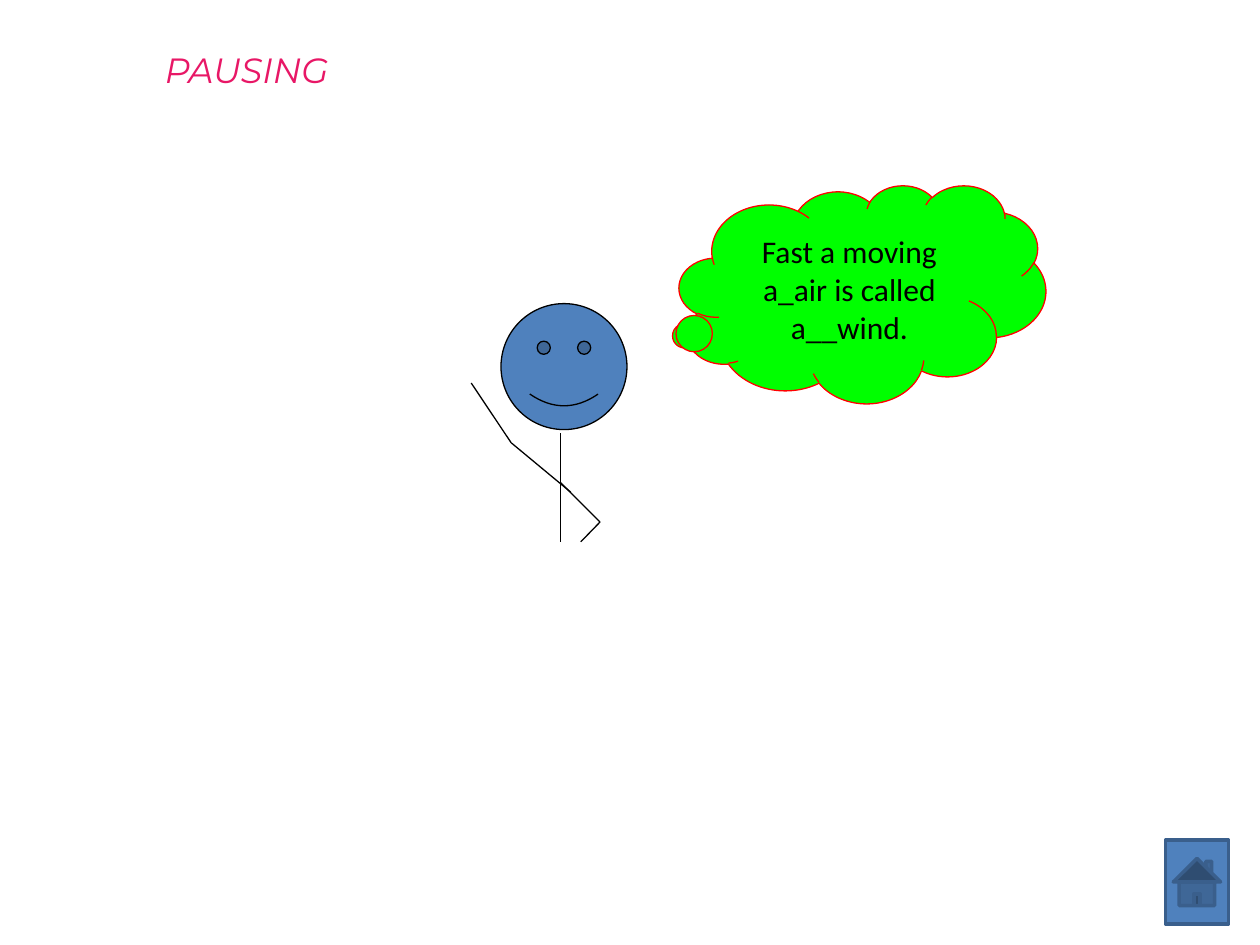
from itertools import pairwise

from lxml import etree
from pptx import Presentation
from pptx.dml.color import RGBColor
from pptx.enum.shapes import MSO_CONNECTOR, MSO_SHAPE
from pptx.enum.text import MSO_ANCHOR, PP_ALIGN
from pptx.oxml.ns import qn
from pptx.util import Pt

LINE = MSO_CONNECTOR.STRAIGHT
FACE = MSO_SHAPE.SMILEY_FACE
CLOUD = MSO_SHAPE.CLOUD_CALLOUT
HOME = MSO_SHAPE.ACTION_BUTTON_HOME
TOP, MID = MSO_ANCHOR.TOP, MSO_ANCHOR.MIDDLE
CENTER = PP_ALIGN.CENTER
MARGIN = {"margin_left": Pt(7.2), "margin_right": Pt(7.2),
          "margin_top": Pt(3.6), "margin_bottom": Pt(3.6)}


def tint(code):
    return RGBColor.from_string(code)


def apply(item, style):
    for name, value in style.items():
        setattr(item, name, value)


class Page:
    """Draw styled elements on one slide, with lengths in points."""

    blue, black, pink = "4F81BD", "000000", "E81766"
    green, red, navy = "00FF00", "FF0000", "3A5F8C"

    def __init__(self, deck):
        self.slide = deck.slides.add_slide(deck.slide_layouts[5])
        self.shapes = self.slide.shapes

    def label(self, shape, text, color, anchor, wrap, **style):
        frame = shape.text_frame
        frame.text = text
        apply(frame, {**MARGIN, "vertical_anchor": anchor, "word_wrap": wrap})
        para = frame.paragraphs[0]
        para.alignment = CENTER
        font = para.runs[0].font
        apply(font, style)
        font.color.rgb = tint(color)

    def title(self, text, box):
        head = self.shapes.title
        apply(head, dict(zip(("left", "top", "width", "height"), map(Pt, box))))
        self.label(head, text, self.pink, TOP, False,
                   name="Montserrat", size=Pt(20), italic=True)

    def shape(self, kind, box, fill, edge, width=0.75):
        item = self.shapes.add_shape(kind, *map(Pt, box))
        item.shadow.inherit = False
        item.fill.solid()
        item.fill.fore_color.rgb = tint(fill)
        item.line.color.rgb = tint(edge)
        item.line.width = Pt(width)
        return item

    def cloud(self, text, box, tail):
        item = self.shape(CLOUD, box, self.green, self.red)
        for i, value in enumerate(tail):
            item.adjustments[i] = value
        self.label(item, text, self.black, MID, True,
                   name="Calibri", size=Pt(18))

    def limb(self, *points):
        for start, end in pairwise(points):
            item = self.shapes.add_connector(LINE, *map(Pt, start + end))
            item.line.color.rgb = tint(self.black)
            item.line.width = Pt(0.75)
            etree.SubElement(item.element.spPr, qn("a:effectLst"))


def main():
    deck = Presentation()
    deck.slide_width, deck.slide_height = Pt(720), Pt(540)
    page = Page(deck)
    page.title("PAUSING", (18, 24, 246, 108))
    page.shape(FACE, (286.3, 173.5, 72, 72), page.blue, page.black)
    page.limb((320.4, 247.7), (320.4, 309.6))
    page.limb((320.4, 275.8), (342.9, 298.3), (331.9, 309.6))
    page.limb((326.2, 281.3), (292.1, 253), (269.3, 218.9))
    page.cloud("Fast a moving a_air is called a__wind.",
               (388.1, 105.8, 209.5, 124.6), (-0.479, 0.189))
    page.shape(HOME, (666, 480, 36, 48), page.blue, page.navy, 2)
    deck.save("out.pptx")


if __name__ == "__main__":
    main()
